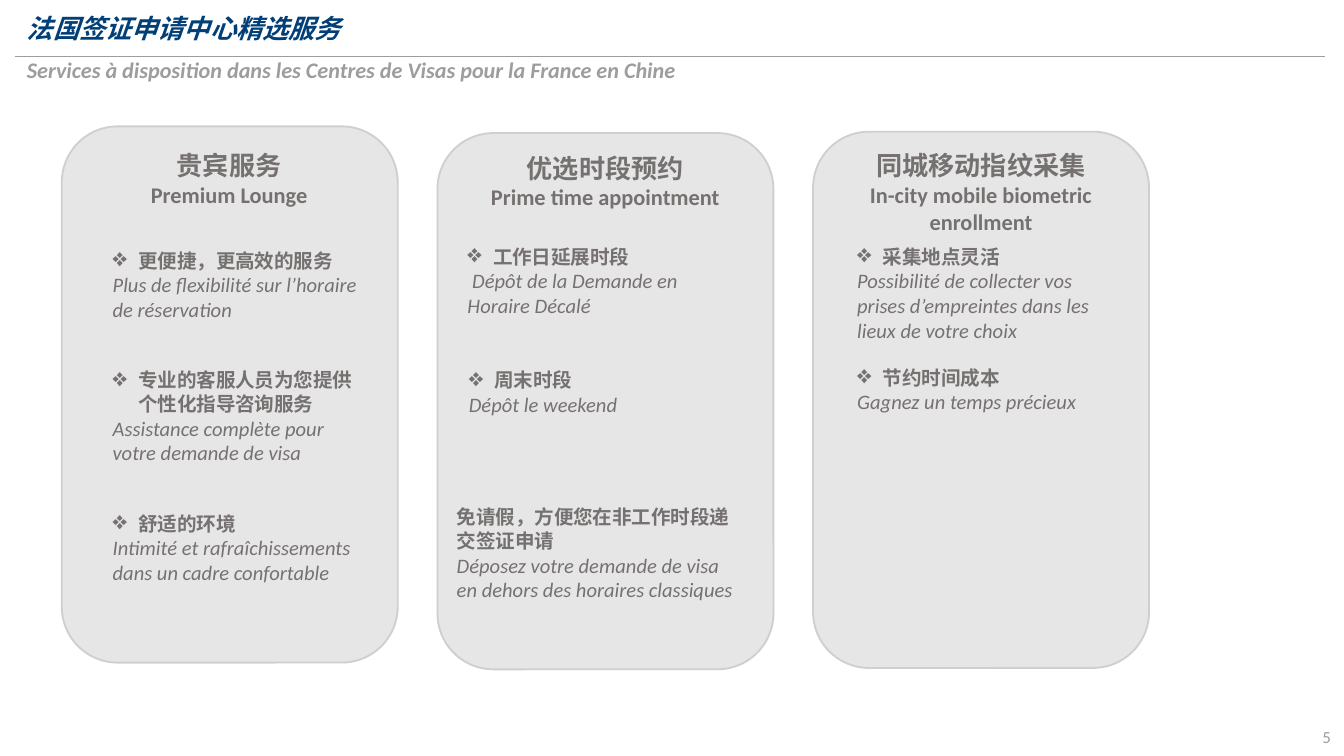
import pptx
import pptx.util
import pptx.dml.color
import pptx.enum.shapes
import pptx.enum.text
import pptx.oxml.ns
import lxml.etree

Inches = pptx.util.Inches
Pt = pptx.util.Pt
Align = pptx.enum.text.PP_ALIGN
Anchor = pptx.enum.text.MSO_ANCHOR
qn = pptx.oxml.ns.qn

HAN = "Noto Sans CJK SC"
LATIN = "Calibri"
NAVY, GRAY, TEXT = "003F77", "9D9D9D", "767171"
PANEL, EDGE = "E7E6E6", "D0CECE"


def color(code):
    return pptx.dml.color.RGBColor.from_string(code)


class Deck:
    """Holds the style and the current slide, and draws each kind of element."""

    def __init__(self, wide, high):
        self.file = pptx.Presentation()
        self.file.slide_width = Inches(wide)
        self.file.slide_height = Inches(high)
        self.slide = self.file.slides.add_slide(self.file.slide_layouts[5])
        self.shapes = self.slide.shapes

    def run(self, para, text, size, font, ink=TEXT, bold=False, slant=False):
        run = para.add_run()
        run.text = text
        face = run.font
        face.size, face.name = Pt(size), font
        face.bold, face.italic = bold, slant
        face.color.rgb = color(ink)
        if font == HAN:
            east = lxml.etree.SubElement(run._r.get_or_add_rPr(), qn("a:ea"))
            east.set("typeface", font)

    def bullet(self, para):
        props = para._p.get_or_add_pPr()
        props.set("marL", str(Inches(0.19)))
        props.set("indent", str(-Inches(0.19)))
        size = lxml.etree.SubElement(props, qn("a:buSzPct"))
        size.set("val", "130000")
        mark = lxml.etree.SubElement(props, qn("a:buChar"))
        mark.set("char", "❖")

    def box(self, left, top, wide, high, wrap=True):
        frame = self.shapes.add_textbox(
            Inches(left), Inches(top), Inches(wide), Inches(high)).text_frame
        frame.word_wrap = wrap
        return frame

    def line(self, left, top, right):
        rule = self.shapes.add_connector(
            pptx.enum.shapes.MSO_CONNECTOR.STRAIGHT,
            Inches(left), Inches(top), Inches(right), Inches(top))
        rule.line.color.rgb = color(GRAY)
        rule.line.width = Pt(0.5)
        lxml.etree.SubElement(rule._element.spPr, qn("a:effectLst"))

    def title(self, text):
        head = self.shapes.title
        head.left, head.top = Inches(0.11), Inches(0.07)
        head.width, head.height = Inches(6.34), Inches(0.23)
        self.banner(head.text_frame, text, 14, HAN, NAVY, Pt(15.4))

    def banner(self, frame, text, size, font, ink, space):
        frame.word_wrap = True
        frame.auto_size = pptx.enum.text.MSO_AUTO_SIZE.NONE
        frame.vertical_anchor = Anchor.TOP
        frame.margin_left = frame.margin_right = Inches(0.09)
        frame.margin_top = frame.margin_bottom = Inches(0.04)
        para = frame.paragraphs[0]
        para.alignment = Align.LEFT
        para.line_spacing = space
        self.run(para, text, size, font, ink, True, True)

    def panel(self, left, top):
        card = self.shapes.add_shape(
            pptx.enum.shapes.MSO_SHAPE.ROUNDED_RECTANGLE,
            Inches(left), Inches(top), Inches(2.5), Inches(3.99))
        card.shadow.inherit = False
        card.fill.solid()
        card.fill.fore_color.rgb = color(PANEL)
        card.line.color.rgb = color(EDGE)
        card.line.width = Pt(1)

    def heading(self, place, han, latin, wrap):
        frame = self.box(*place, wrap)
        first, second = frame.paragraphs[0], frame.add_paragraph()
        first.alignment = second.alignment = Align.CENTER
        first.line_spacing = Pt(17)
        self.run(first, han, 14, HAN, bold=True)
        self.run(second, latin, 12, LATIN, bold=True)

    def points(self, place, pairs, gap=0, mark=True):
        frame = self.box(*place)
        for num, (han, latin) in enumerate(pairs):
            para = frame.add_paragraph() if num else frame.paragraphs[0]
            if num:
                para.space_before = Pt(gap)
            para.line_spacing = Pt(12.7)
            if mark:
                self.bullet(para)
            self.run(para, han, 10.5, HAN, bold=True)
            self.run(frame.add_paragraph(), latin, 11, LATIN, slant=True)

    def number(self, text):
        frame = self.box(9.5, 5.33, 0.5, 0.3)
        frame.vertical_anchor = Anchor.MIDDLE
        frame.paragraphs[0].alignment = Align.RIGHT
        self.run(frame.paragraphs[0], text, 9, LATIN, GRAY)


def main():
    deck = Deck(10, 10 * 9 / 16)
    deck.line(0.11, 0.42, 9.86)
    deck.number("5")
    deck.title("法国签证申请中心精选服务")
    deck.banner(
        deck.box(0.11, 0.43, 6.34, 0.23),
        "Services à disposition dans les Centres de Visas pour la France en Chine",
        11.9, LATIN, GRAY, 0.7)

    for col, top in enumerate((0.94, 0.99, 0.98)):
        deck.panel(0.46 + col * 2.795, top)

    heads = [
        ((1.01, 1.06, 1.39, 0.54), "贵宾服务", "Premium Lounge", False),
        ((3.54, 1.08, 1.93, 0.54), "优选时段预约", "Prime time appointment", False),
        ((6.13, 1.06, 2.34, 0.97), "同城移动指纹采集",
         "In-city mobile biometric enrollment", True),
    ]
    for head in heads:
        deck.heading(*head)

    deck.points((0.74, 1.8, 2.04, 2.8), [
        ("更便捷，更高效的服务", "Plus de flexibilité sur l’horaire de réservation"),
        ("专业的客服人员为您提供个性化指导咨询服务",
         "Assistance complète pour votre demande de visa"),
        ("舒适的环境", "Intimité et rafraîchissements dans un cadre confortable"),
    ], gap=25)
    deck.points((3.38, 1.77, 2.22, 0.65), [
        ("工作日延展时段", " Dépôt de la Demande en Horaire Décalé")])
    deck.points((3.39, 2.69, 2.22, 0.46), [("周末时段", "Dépôt le weekend")])
    deck.points((3.3, 3.71, 2.29, 0.82), [
        ("免请假，方便您在非工作时段递交签证申请",
         "Déposez votre demande de visa en dehors des horaires classiques"),
    ], mark=False)
    deck.points((6.28, 1.77, 2.04, 2.08), [
        ("采集地点灵活",
         "Possibilité de collecter vos prises d’empreintes dans les lieux de votre choix"),
        ("节约时间成本", "Gagnez un temps précieux"),
    ], gap=12.5)
    deck.file.save("out.pptx")


if __name__ == "__main__":
    main()
